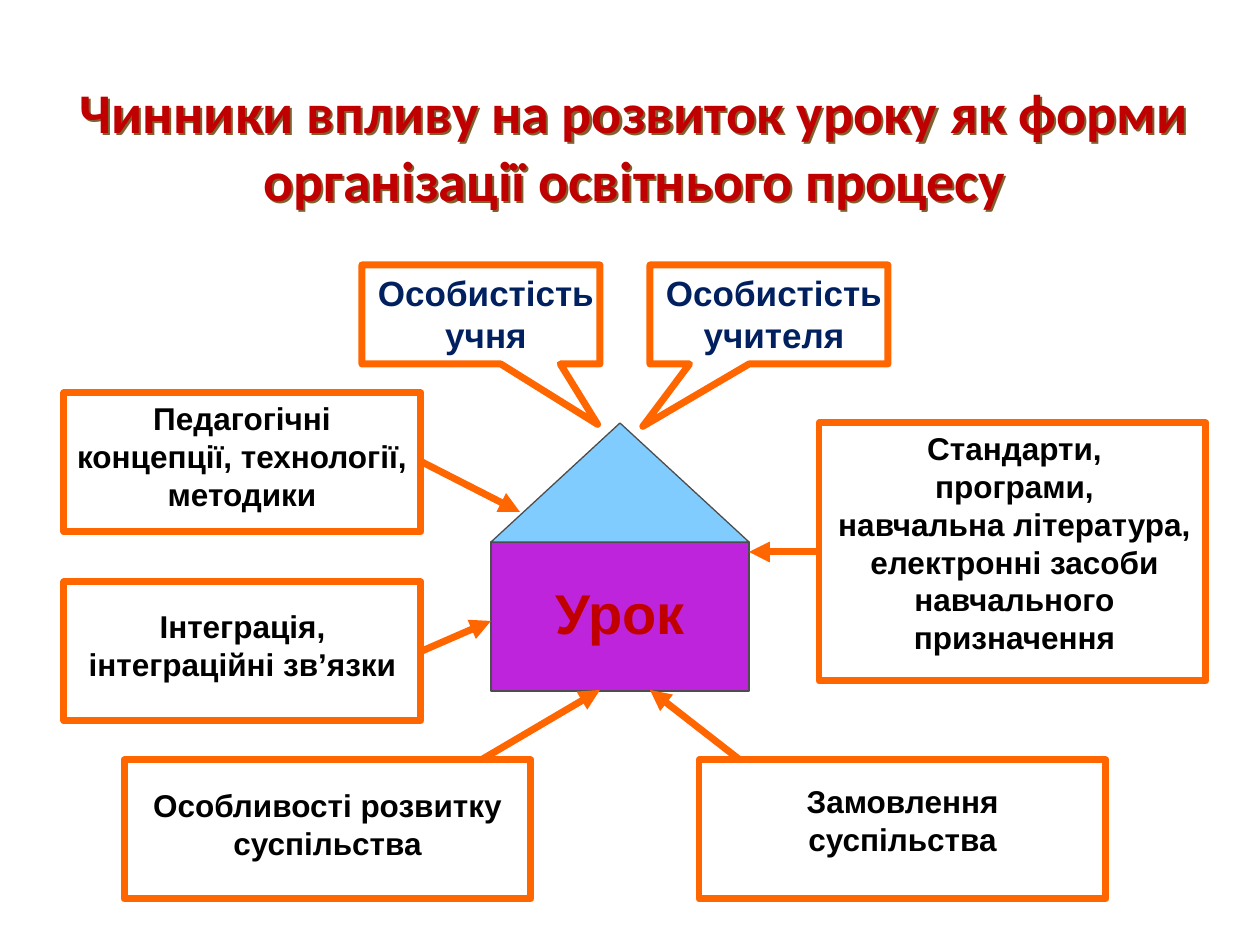
from lxml import etree
from pptx import Presentation
from pptx.dml.color import RGBColor
from pptx.enum.shapes import MSO_CONNECTOR, MSO_SHAPE
from pptx.enum.text import MSO_ANCHOR, MSO_AUTO_SIZE, PP_ALIGN
from pptx.oxml.ns import qn
from pptx.util import Emu, Pt

RECTANGLE = MSO_SHAPE.RECTANGLE
TRIANGLE = MSO_SHAPE.ISOSCELES_TRIANGLE
CALLOUT = MSO_SHAPE.RECTANGULAR_CALLOUT
STRAIGHT = MSO_CONNECTOR.STRAIGHT
CENTER = PP_ALIGN.CENTER
TOP = MSO_ANCHOR.TOP
MIDDLE = MSO_ANCHOR.MIDDLE
GROW = MSO_AUTO_SIZE.SHAPE_TO_FIT_TEXT
FIXED = MSO_AUTO_SIZE.NONE

RED = RGBColor(0xC0, 0x00, 0x00)
ORANGE = RGBColor(0xFF, 0x66, 0x00)
NAVY = RGBColor(0x00, 0x20, 0x60)
BLACK = RGBColor(0x00, 0x00, 0x00)
GRAY = RGBColor(0x4D, 0x4D, 0x4D)
PURPLE = RGBColor(0xBD, 0x24, 0xDC)
SKY = RGBColor(0x81, 0xCC, 0xFF)
OLIVE = RGBColor(0x7F, 0x60, 0x30)

PX_PER_INCH = 126


def px(length):
    return Emu(round(length * 914400 / PX_PER_INCH))


def write(box, text, font="Arial", size=18, color=BLACK, anchor=TOP, fit=GROW):
    frame = box.text_frame
    frame.word_wrap = True
    frame.auto_size = fit
    frame.vertical_anchor = anchor
    for index, line in enumerate(text.split("\n")):
        para = frame.add_paragraph() if index else frame.paragraphs[0]
        para.alignment = CENTER
        span = para.add_run()
        span.text = line
        span.font.name = font
        span.font.size = Pt(size)
        span.font.bold = True
        span.font.color.rgb = color


class Diagram:
    """Draws the parts of the lesson diagram on one page."""

    def __init__(self, page):
        self.page = page
        self.accent = ORANGE
        self.weight = Pt(4)

    def text(self, area, text, **style):
        box = self.page.shapes.add_textbox(*map(px, area))
        write(box, text, **style)
        return box

    def title(self, area, text):
        box = self.text(area, text, font="Calibri", size=32, color=RED,
                        anchor=MIDDLE, fit=FIXED)
        effects = etree.SubElement(box.element.spPr, qn("a:effectLst"))
        shadow = etree.SubElement(effects, qn("a:outerShdw"), dist=str(px(3)),
                                  dir="2700000", algn="tl", rotWithShape="0")
        etree.SubElement(shadow, qn("a:srgbClr"), val=str(OLIVE))

    def shape(self, kind, area, fill=None, line=None, weight=None):
        shape = self.page.shapes.add_shape(kind, *map(px, area))
        shape.shadow.inherit = False
        if fill is None:
            shape.fill.background()
        else:
            shape.fill.solid()
            shape.fill.fore_color.rgb = fill
        shape.line.color.rgb = line or self.accent
        shape.line.width = weight or self.weight
        return shape

    def callout(self, area, tip):
        shape = self.shape(CALLOUT, area)
        for index, value in enumerate(tip):
            shape.adjustments[index] = value

    def arrow(self, start, end):
        line = self.page.shapes.add_connector(STRAIGHT, *map(px, start + end))
        line.line.color.rgb = self.accent
        line.line.width = self.weight
        etree.SubElement(line.line._get_or_add_ln(), qn("a:tailEnd"), type="triangle")
        etree.SubElement(line.element.spPr, qn("a:effectLst"))


def main():
    deck = Presentation()
    deck.slide_width, deck.slide_height = px(1260), px(945)
    diagram = Diagram(deck.slides.add_slide(deck.slide_layouts[6]))

    diagram.title((44, 86, 1181, 118),
                  "Чинники впливу на розвиток уроку як форми організації освітнього процесу")

    diagram.shape(RECTANGLE, (491, 542, 258, 149), PURPLE, GRAY, Pt(0.75))
    diagram.shape(TRIANGLE, (491, 423, 258, 119), SKY, GRAY, Pt(0.75))
    diagram.text((501, 572, 238, 79), "Урок", size=32, color=RED)

    people = [
        (362, (0.49, 1.11), "Особистість учня"),
        (650, (-0.53, 1.13), "Особистість учителя"),
    ]
    for left, tip, text in people:
        diagram.callout((left, 265, 238, 99), tip)
        diagram.text((left, 265, 248, 97), text, size=20, color=NAVY)

    factors = [
        ((64, 393, 357, 139), (63, 393, 358, 127),
         "Педагогічні концепції, технології, методики"),
        ((64, 582, 357, 139), (64, 601, 357, 89),
         "Інтеграція, інтеграційні зв’язки"),
        ((124, 760, 407, 139), (134, 780, 387, 89),
         "Особливості розвитку суспільства"),
        ((699, 760, 407, 139), (709, 776, 387, 89),
         "Замовлення суспільства"),
        ((819, 423, 387, 258), (821, 423, 387, 242),
         "Стандарти,\nпрограми,\nнавчальна література,\n"
         "електронні засоби навчального призначення"),
    ]
    for frame, area, text in factors:
        diagram.shape(RECTANGLE, frame)
        diagram.text(area, text)

    arrows = [
        ((422, 462), (520, 512)),
        ((422, 651), (491, 621)),
        ((481, 760), (600, 690)),
        ((740, 760), (650, 690)),
        ((819, 552), (749, 552)),
    ]
    for start, end in arrows:
        diagram.arrow(start, end)

    deck.save("out.pptx")


if __name__ == "__main__":
    main()
